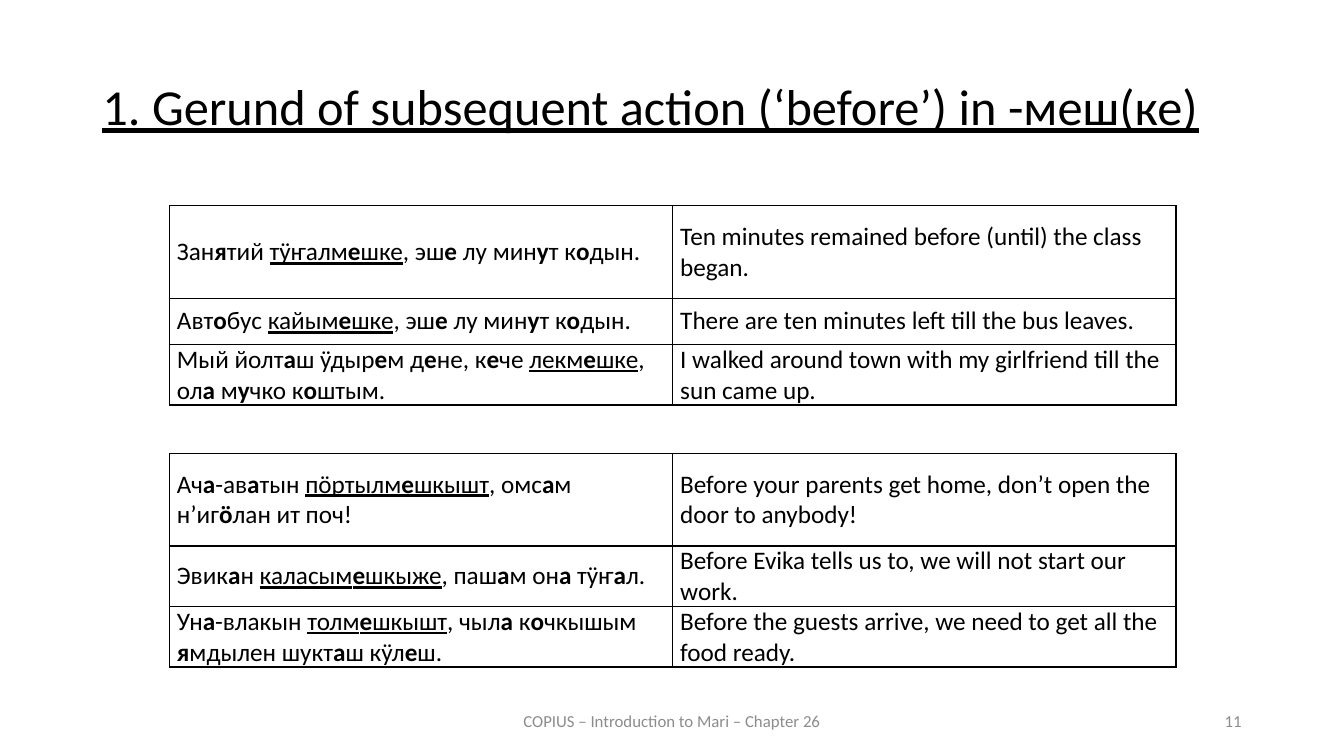
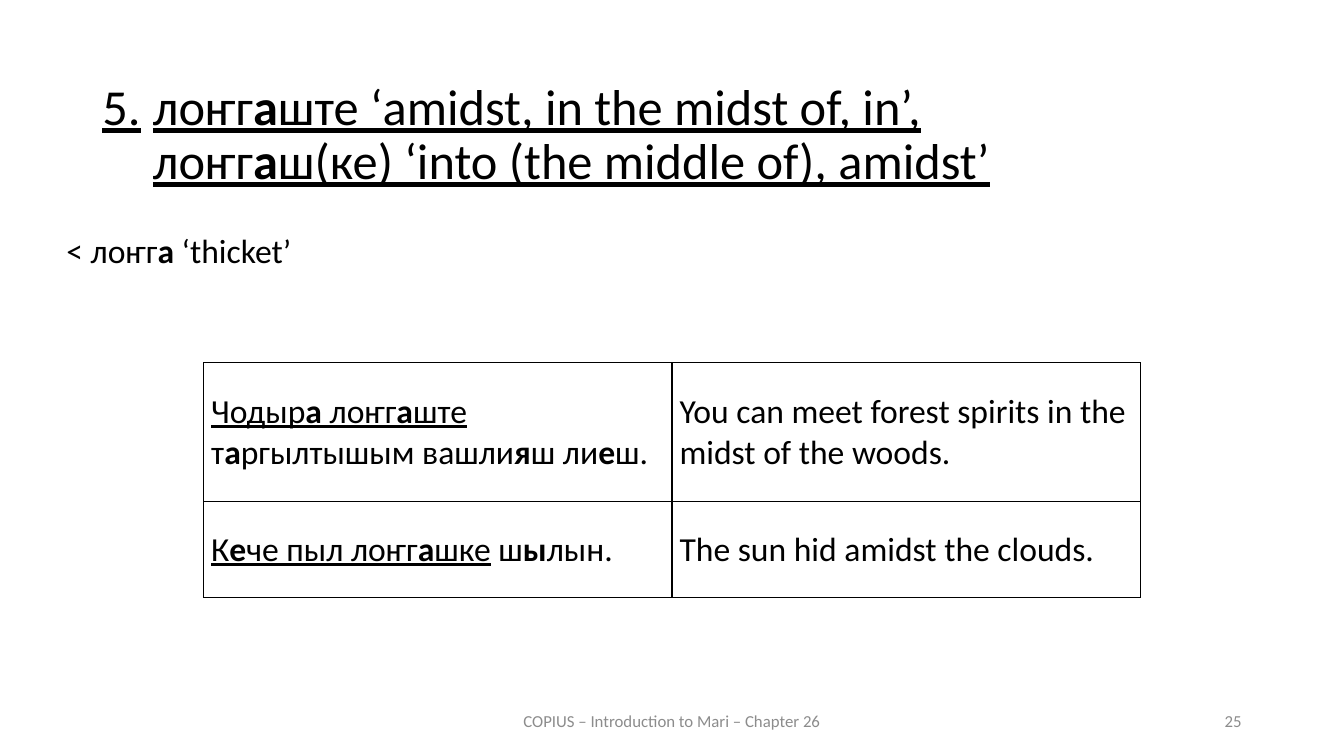
from copy import deepcopy
from dataclasses import dataclass

from lxml import etree
from pptx import Presentation
from pptx import util as u
from pptx.dml.color import RGBColor
from pptx.enum import text
from pptx.oxml import ns

Pt = u.Pt
LEFT, MID, RIGHT = text.PP_ALIGN.LEFT, text.PP_ALIGN.CENTER, text.PP_ALIGN.RIGHT


@dataclass(frozen=True)
class Theme:
    """Colours, font and type sizes of the deck."""
    font: str = "Calibri"
    ink: str = "000000"
    grey: str = "8C8C8C"
    paper: str = "FFFFFF"
    title: int = 36
    large: int = 24
    small: int = 18
    foot: int = 12
    line: int = 1


@dataclass(frozen=True)
class Box:
    """A rectangle in points."""
    x: float
    y: float
    w: float
    h: float

    def place(self, shape):
        """Move a shape onto this box."""
        shape.left, shape.top = Pt(self.x), Pt(self.y)
        shape.width, shape.height = Pt(self.w), Pt(self.h)


THEME = Theme()
WIDE, HIGH = 960, 540
HEAD = Box(66, 54.7, 828, 60)
FOOT = Box(66, 500.5, 828, 28.8)
NOTE = "COPIUS – Introduction to Mari – Chapter 26"

BEFORE = [
    ("Зан*я*тий _тӱҥалм*е*шке_, эш*е* лу мин*у*т к*о*дын.",
     "Ten minutes remained before (until) the class began."),
    ("Авт*о*бус _кайым*е*шке_, эш*е* лу мин*у*т к*о*дын.",
     "There are ten minutes left till the bus leaves."),
    ("Мый йолт*а*ш ӱдыр*е*м д*е*не, к*е*че _лекм*е*шке_, ол*а *м*у*чко к*о*штым.",
     "I walked around town with my girlfriend till the sun came up."),
]
PERSON = [
    ("Ач*а*-ав*а*тын _пӧртылм*е*шкышт_, омс*а*м н’иг*ӧ*лан ит поч!",
     "Before your parents get home, don’t open the door to anybody!"),
    ("Эвик*а*н _каласым*е*шкыже_, паш*а*м он*а* тӱҥ*а*л.",
     "Before Evika tells us to, we will not start our work."),
    ("Ун*а*-влакын _толм*е*шкышт_, чыл*а* к*о*чкышым *я*мдылен шукт*а*ш кӱл*е*ш.",
     "Before the guests arrive, we need to get all the food ready."),
]
AMIDST = [
    ("_Чодыр*а* лоҥг*а*ште_ т*а*ргылтышым вашли*я*ш ли*е*ш.",
     "You can meet forest spirits in the midst of the woods."),
    ("_К*е*че пыл лоҥг*а*шке_ ш*ы*лын.", "The sun hid amidst the clouds."),
]


def write(frame, marked, size, color=THEME.ink, align=LEFT):
    """Fill a frame run by run; *stars* are bold, _bars_ are underlined."""
    frame.word_wrap = True
    para = frame.paragraphs[0]
    para.alignment = align
    bold = False
    for i, span in enumerate(marked.split("_")):
        for j, part in enumerate(span.split("*")):
            bold = j % 2 == 1
            for k, words in enumerate(part.split("\n")):
                if k:
                    para.add_line_break()
                    para._p[-1].append(deepcopy(run._r.rPr))
                if words:
                    run = para.add_run()
                    run.text = words
                    font = run.font
                    font.name, font.size = THEME.font, Pt(size)
                    font.bold, font.underline = bold, i % 2 == 1
                    font.color.rgb = RGBColor.from_string(color)
    return para


def label(slide, box, marked, size, **style):
    """Add a text box and return its frame."""
    shape = slide.shapes.add_textbox(0, 0, 0, 0)
    box.place(shape)
    write(shape.text_frame, marked, size, **style)
    return shape.text_frame


def title(slide, box, marked, align=LEFT):
    """Fill the title placeholder."""
    shape = slide.shapes.title
    box.place(shape)
    frame = shape.text_frame
    frame.auto_size = text.MSO_AUTO_SIZE.NONE
    frame.vertical_anchor = text.MSO_ANCHOR.TOP
    para = write(frame, marked, THEME.title, align=align)
    para.line_spacing, para.space_before = 0.9, Pt(12)


def footer(slide, box, page):
    """Add the course name in the centre and the page at the right."""
    mid = Box(box.x + (box.w - 324) / 2, box.y, 324, box.h)
    end = Box(box.x + box.w - 216, box.y, 216, box.h)
    for part, words, align in ((mid, NOTE, MID), (end, str(page), RIGHT)):
        frame = label(slide, part, words, THEME.foot, color=THEME.grey, align=align)
        frame.vertical_anchor = text.MSO_ANCHOR.MIDDLE


def border(cell):
    """Rule all four sides of a cell."""
    props = cell._tc.get_or_add_tcPr()
    for side in ("lnL", "lnR", "lnT", "lnB"):
        line = etree.SubElement(props, ns.qn("a:" + side), w=str(Pt(THEME.line)))
        fill = etree.SubElement(line, ns.qn("a:solidFill"))
        etree.SubElement(fill, ns.qn("a:srgbClr"), val=THEME.ink)


def pairs(slide, box, rows, highs, size):
    """Add a two-column table of sentences and translations."""
    shape = slide.shapes.add_table(
        len(rows), 2, Pt(box.x), Pt(box.y), Pt(box.w), Pt(box.h))
    table = shape.table
    table.first_row = table.horz_banding = False
    for col in table.columns:
        col.width = Pt(box.w / 2)
    for i, (row, high) in enumerate(zip(rows, highs)):
        table.rows[i].height = Pt(high)
        for cell, words in zip(table.rows[i].cells, row):
            border(cell)
            cell.fill.solid()
            cell.fill.fore_color.rgb = RGBColor.from_string(THEME.paper)
            cell.margin_left = cell.margin_right = Pt(5.4)
            cell.margin_top = cell.margin_bottom = 0
            cell.vertical_anchor = text.MSO_ANCHOR.MIDDLE
            write(cell.text_frame, words, size)


def start(deck, head, page, align=LEFT):
    """Add a slide with its title and footer."""
    slide = deck.slides.add_slide(deck.slide_layouts[5])
    title(slide, HEAD, head, align)
    footer(slide, FOOT, page)
    return slide


def gerund(deck):
    """Build the slide on the gerund."""
    slide = start(deck, "_1. Gerund of subsequent action (‘before’) in -меш(ке)_",
                  11, text.PP_ALIGN.JUSTIFY)
    for top, rows in ((147, BEFORE), (324, PERSON)):
        pairs(slide, Box(121, top, 719, 132), rows, (66, 33, 33), THEME.small)


def amidst(deck):
    """Build the slide on the postpositions."""
    slide = start(deck, "_5.\tлоҥг*а*ште ‘amidst, in the midst of, in’,\n_\t"
                  "_лоҥг*а*ш(ке) ‘into (the middle of), amidst’_", 25)
    HEAD_TALL = Box(HEAD.x, HEAD.y, HEAD.w, 90.7)
    HEAD_TALL.place(slide.shapes.title)
    label(slide, Box(40.3, 160.6, 480, 36), "< лоҥг*а* ‘thicket’", THEME.large)
    pairs(slide, Box(145.5, 259, 669, 168), AMIDST, (99.5, 68.5), THEME.large)


def main():
    """Build and save the deck."""
    deck = Presentation()
    deck.slide_width, deck.slide_height = Pt(WIDE), Pt(HIGH)
    gerund(deck)
    amidst(deck)
    deck.save("out.pptx")


if __name__ == "__main__":
    main()
